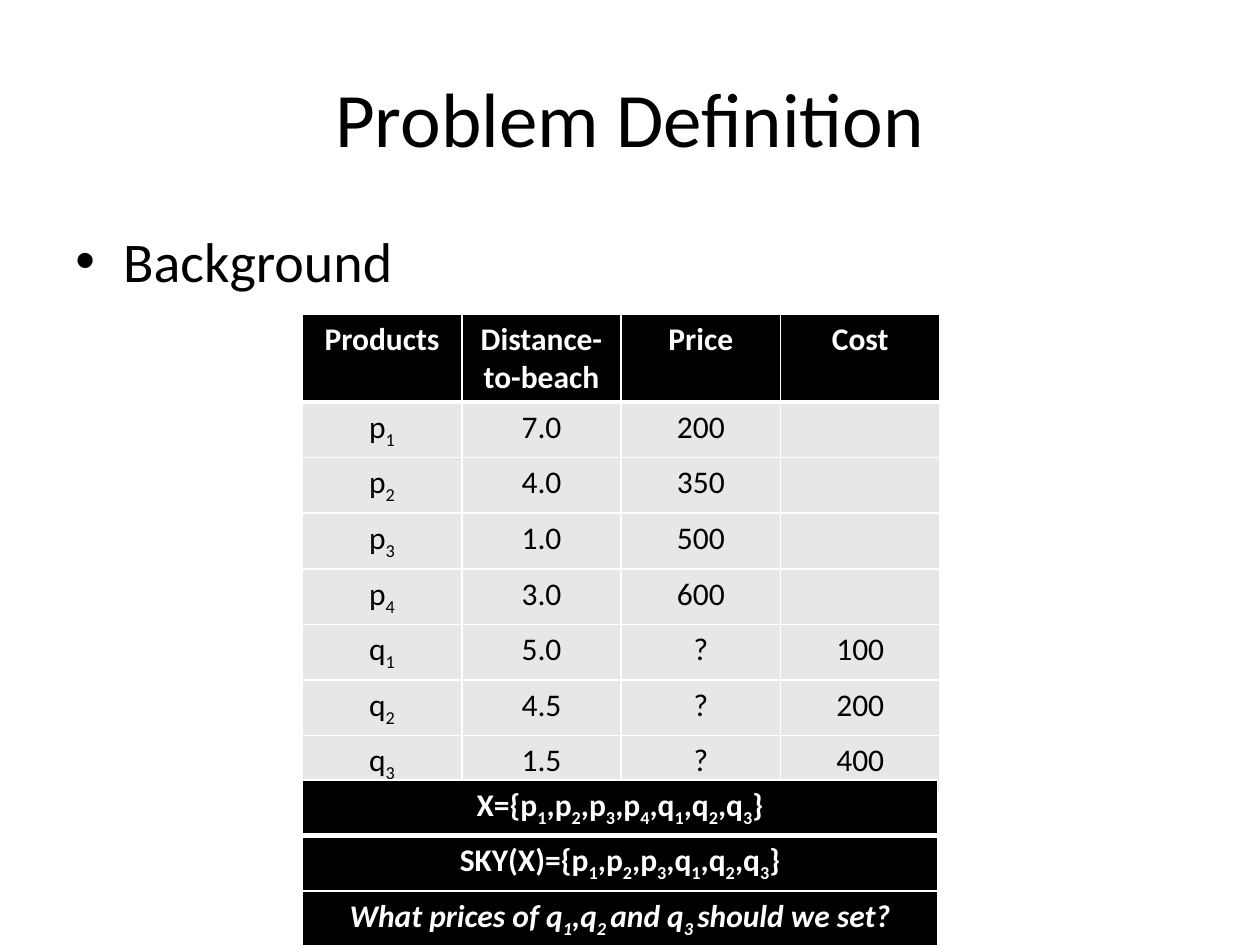
from lxml.etree import SubElement
from pptx import Presentation
from pptx.dml.color import RGBColor
from pptx.enum.text import MSO_ANCHOR, PP_ALIGN
from pptx.oxml.ns import qn
from pptx.util import Inches, Pt

BLACK = RGBColor(0x00, 0x00, 0x00)
WHITE = RGBColor(0xFF, 0xFF, 0xFF)
GRAY = RGBColor(0xE7, 0xE7, 0xE7)
FONT = "Calibri"
ROW_H = 0.41

PRODUCTS = [
    ("Products", "Distance-to-beach", "Price", "Cost"),
    ("p_1_", "7.0", "200", ""),
    ("p_2_", "4.0", "350", ""),
    ("p_3_", "1.0", "500", ""),
    ("p_4_", "3.0", "600", ""),
    ("q_1_", "5.0", "?", "100"),
    ("q_2_", "4.5", "?", "200"),
    ("q_3_", "1.5", "?", "400"),
]
STATEMENTS = [
    ("X={p_1_,p_2_,p_3_,p_4_,q_1_,q_2_,q_3_}",),
    ("SKY(X)={p_1_,p_2_,p_3_,q_1_,q_2_,q_3_}",),
    ("What prices of q_1_,q_2 _and q_3 _should we set?",),
]


def write(tf, text, size=18, color=BLACK, bold=False, italic=False,
          align=PP_ALIGN.CENTER):
    """Set the text of a frame; parts between underscores are subscripts."""
    p = tf.paragraphs[0]
    p.alignment = align
    for i, part in enumerate(text.split("_")):
        if not part:
            continue
        r = p.add_run()
        r.text = part
        r.font.name = FONT
        r.font.size = Pt(size)
        r.font.bold = bold
        r.font.italic = italic
        r.font.color.rgb = color
        if i % 2:
            r.font._element.set("baseline", "-25000")
    return p


def add_text(s, box, text, **fmt):
    tf = s.shapes.add_textbox(*map(Inches, box)).text_frame
    tf.word_wrap = True
    return tf, write(tf, text, **fmt)


def add_title(s, box, text):
    tf, _ = add_text(s, box, text, size=44)
    tf.vertical_anchor = MSO_ANCHOR.MIDDLE


def add_bullet(s, box, text):
    _, p = add_text(s, box, text, size=32, align=PP_ALIGN.LEFT)
    p.space_before = Pt(6.4)
    pPr = p._p.get_or_add_pPr()
    pPr.set("marL", str(Inches(0.38)))
    pPr.set("indent", str(-Inches(0.38)))
    SubElement(pPr, qn("a:buFont"), typeface="Arial")
    SubElement(pPr, qn("a:buChar"), char="•")


def set_borders(cell, top=1, bottom=1):
    tcPr = cell._tc.get_or_add_tcPr()
    for side, width in zip("LRTB", (1, 1, top, bottom)):
        ln = SubElement(tcPr, qn(f"a:ln{side}"), w=str(Pt(width)))
        fill = SubElement(ln, qn("a:solidFill"))
        SubElement(fill, qn("a:srgbClr"), val=str(WHITE))


def add_grid(s, left, top, width, rows, heights, body_fill, style):
    n_cols = len(rows[0])
    frame = s.shapes.add_table(len(rows), n_cols, Inches(left), Inches(top),
                               Inches(width), Inches(sum(heights)))
    table = frame.table
    for col in table.columns:
        col.width = Inches(width / n_cols)
    for i, (values, height) in enumerate(zip(rows, heights)):
        table.rows[i].height = Inches(height)
        for j, text in enumerate(values):
            cell = table.cell(i, j)
            set_borders(cell, top=3 if i == 1 else 1, bottom=1 if i else 3)
            cell.fill.solid()
            cell.fill.fore_color.rgb = body_fill if i else BLACK
            write(cell.text_frame, text, **style(i))


def product_style(i):
    return {"color": BLACK if i else WHITE, "bold": i == 0}


def statement_style(i):
    return {"color": WHITE, "bold": True, "italic": i == 2}


def main():
    prs = Presentation()
    prs.slide_width, prs.slide_height = Inches(10), Inches(7.5)
    s = prs.slides.add_slide(prs.slide_layouts[6])
    add_title(s, (0.5, 0.3, 9, 1.25), "Problem Definition")
    add_bullet(s, (0.5, 1.75, 4.74, 4.95), "Background")
    add_grid(s, 2.4, 2.49, 5.06, PRODUCTS, [ROW_H] * len(PRODUCTS),
             GRAY, product_style)
    add_grid(s, 2.4, 6.19, 5.04, STATEMENTS, [0.15, ROW_H, ROW_H],
             BLACK, statement_style)
    prs.save("out.pptx")


if __name__ == "__main__":
    main()
